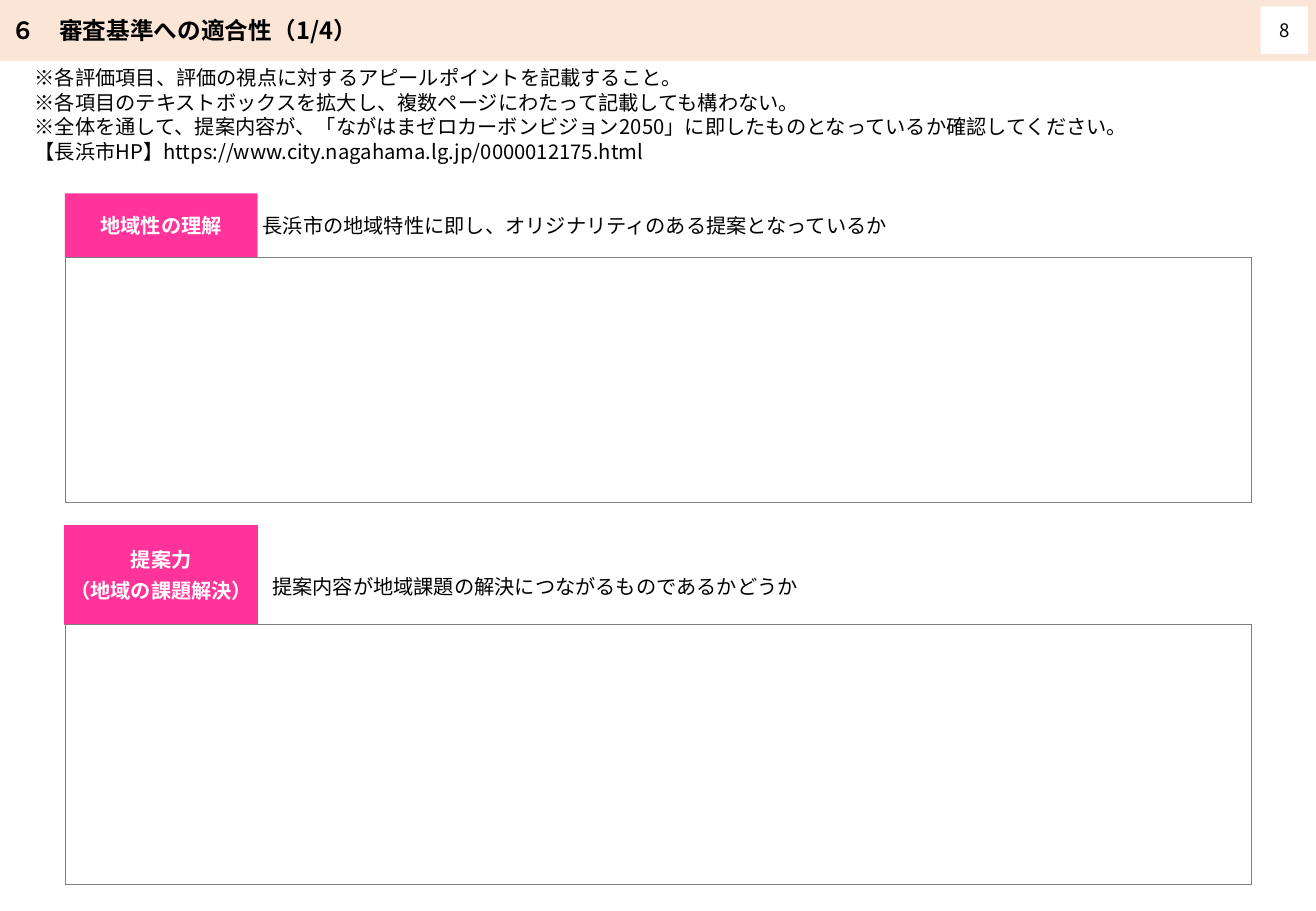
from dataclasses import dataclass
from typing import Any

from pptx import Presentation
from pptx.dml.color import RGBColor as Color
from pptx.enum.shapes import MSO_SHAPE as ShapeKind
from pptx.enum.text import MSO_ANCHOR as Anchor, MSO_AUTO_SIZE as AutoSize, PP_ALIGN as Align
from pptx.oxml.ns import qn
from pptx.util import Pt
from lxml.etree import SubElement


@dataclass(frozen=True)
class Theme:
    font: str = "Noto Sans CJK JP"
    ink: str = "000000"
    paper: str = "FFFFFF"
    band: str = "FBE5D6"
    accent: str = "FF3399"
    border: str = "808080"
    title_size: float = 14
    body_size: float = 12
    page_size: float = 11
    line_pitch: float = 14.5
    border_width: float = 0.5


THEME = Theme()


@dataclass(frozen=True)
class Box:
    left: float
    top: float
    width: float
    height: float

    def lengths(self) -> tuple[Pt, Pt, Pt, Pt]:
        return Pt(self.left), Pt(self.top), Pt(self.width), Pt(self.height)


@dataclass(frozen=True)
class TextStyle:
    size: float = THEME.body_size
    color: str = THEME.ink
    bold: bool = False
    align: Align = Align.LEFT
    anchor: Anchor = Anchor.MIDDLE
    inset_x: float = 7.2
    inset_y: float = 3.6
    space_after: float = 0


@dataclass(frozen=True)
class Criterion:
    label: tuple[str, ...]
    label_box: Box
    question: str
    question_box: Box
    answer_box: Box
    outlined: bool = False


TITLE = TextStyle(size=THEME.title_size, bold=True)
PAGE = TextStyle(size=THEME.page_size, align=Align.CENTER)
NOTES = TextStyle(anchor=Anchor.TOP)
QUESTION = TextStyle(inset_x=2.88, inset_y=2.88, space_after=4)
LABEL = TextStyle(color=THEME.paper, bold=True, align=Align.CENTER,
                  inset_x=2.88, inset_y=2.88, space_after=4)

NOTE_LINES = (
    "※各評価項目、評価の視点に対するアピールポイントを記載すること。",
    "※各項目のテキストボックスを拡大し、複数ページにわたって記載しても構わない。",
    "※全体を通して、提案内容が、「ながはまゼロカーボンビジョン2050」に即したものとなっているか確認してください。",
    "【長浜市HP】https://www.city.nagahama.lg.jp/0000012175.html",
)

CRITERIA = (
    Criterion(("地域性の理解",), Box(38.5, 114.6, 114.3, 37.8),
              "長浜市の地域特性に即し、オリジナリティのある提案となっているか",
              Box(152.8, 114.6, 589, 37.8), Box(38.5, 152.5, 703, 145.4)),
    Criterion(("提案力", "（地域の課題解決）"), Box(38.5, 311.3, 114.3, 58.8),
              "提案内容が地域課題の解決につながるものであるかどうか",
              Box(158.4, 326.2, 589, 43.2), Box(38.5, 370.1, 703, 154), True),
)


def set_formats(target: Any, formats: dict[str, Any]) -> None:
    for name, value in formats.items():
        setattr(target, name, value)


def write_text(shape: Any, lines: tuple[str, ...], style: TextStyle) -> None:
    frame = shape.text_frame
    set_formats(frame, {
        "word_wrap": True, "vertical_anchor": style.anchor,
        "margin_left": Pt(style.inset_x), "margin_right": Pt(style.inset_x),
        "margin_top": Pt(style.inset_y), "margin_bottom": Pt(style.inset_y),
    })
    for index, line in enumerate(lines):
        paragraph = frame.add_paragraph() if index else frame.paragraphs[0]
        set_formats(paragraph, {"alignment": style.align, "space_after": Pt(style.space_after)})
        if len(lines) > 1:
            paragraph.line_spacing = Pt(THEME.line_pitch)
        run = paragraph.add_run()
        run.text = line
        set_formats(run.font, {"name": THEME.font, "size": Pt(style.size), "bold": style.bold})
        run.font.color.rgb = Color.from_string(style.color)
        east_asian = SubElement(run.font._element, qn("a:ea"))
        east_asian.set("typeface", THEME.font)


def add_panel(shapes: Any, box: Box, fill: str, lines: tuple[str, ...],
              style: TextStyle, line_width: float = 0) -> None:
    shape = shapes.add_shape(ShapeKind.RECTANGLE, *box.lengths())
    shape.shadow.inherit = False
    shape.fill.solid()
    shape.fill.fore_color.rgb = Color.from_string(fill)
    if line_width:
        shape.line.color.rgb = Color.from_string(fill)
        shape.line.width = Pt(line_width)
    else:
        shape.line.fill.background()
    write_text(shape, lines, style)


def add_answer_table(shapes: Any, box: Box) -> None:
    table = shapes.add_table(1, 1, *box.lengths()).table
    set_formats(table, {"first_row": False, "horz_banding": False})
    cell = table.cell(0, 0)
    properties = cell._tc.get_or_add_tcPr()
    for side in ("lnL", "lnR", "lnT", "lnB"):
        border = SubElement(properties, qn(f"a:{side}"), w=str(Pt(THEME.border_width)))
        fill = SubElement(border, qn("a:solidFill"))
        SubElement(fill, qn("a:srgbClr"), val=THEME.border)
    cell.fill.background()


def add_criterion(shapes: Any, criterion: Criterion) -> None:
    heading = shapes.add_group_shape()
    add_panel(heading.shapes, criterion.label_box, THEME.accent, criterion.label, LABEL,
              0.75 if criterion.outlined else 0)
    add_panel(heading.shapes, criterion.question_box, THEME.paper,
              (criterion.question,), QUESTION)
    add_answer_table(shapes, criterion.answer_box)


def main() -> None:
    presentation = Presentation()
    set_formats(presentation, {"slide_width": Pt(780), "slide_height": Pt(540)})
    slide = presentation.slides.add_slide(presentation.slide_layouts[6])
    shapes = slide.shapes
    add_panel(shapes, Box(0, 0, 780, 35.5), THEME.band,
              ("６　審査基準への適合性（1/4）",), TITLE, 1)
    add_panel(shapes, Box(747.2, 3.8, 28.2, 28.2), THEME.paper, ("8",), PAGE)
    notes = shapes.add_textbox(*Box(13.5, 35.3, 753, 65.4).lengths())
    write_text(notes, NOTE_LINES, NOTES)
    notes.text_frame.auto_size = AutoSize.SHAPE_TO_FIT_TEXT
    for criterion in CRITERIA:
        add_criterion(shapes, criterion)
    presentation.save("out.pptx")


if __name__ == "__main__":
    main()
